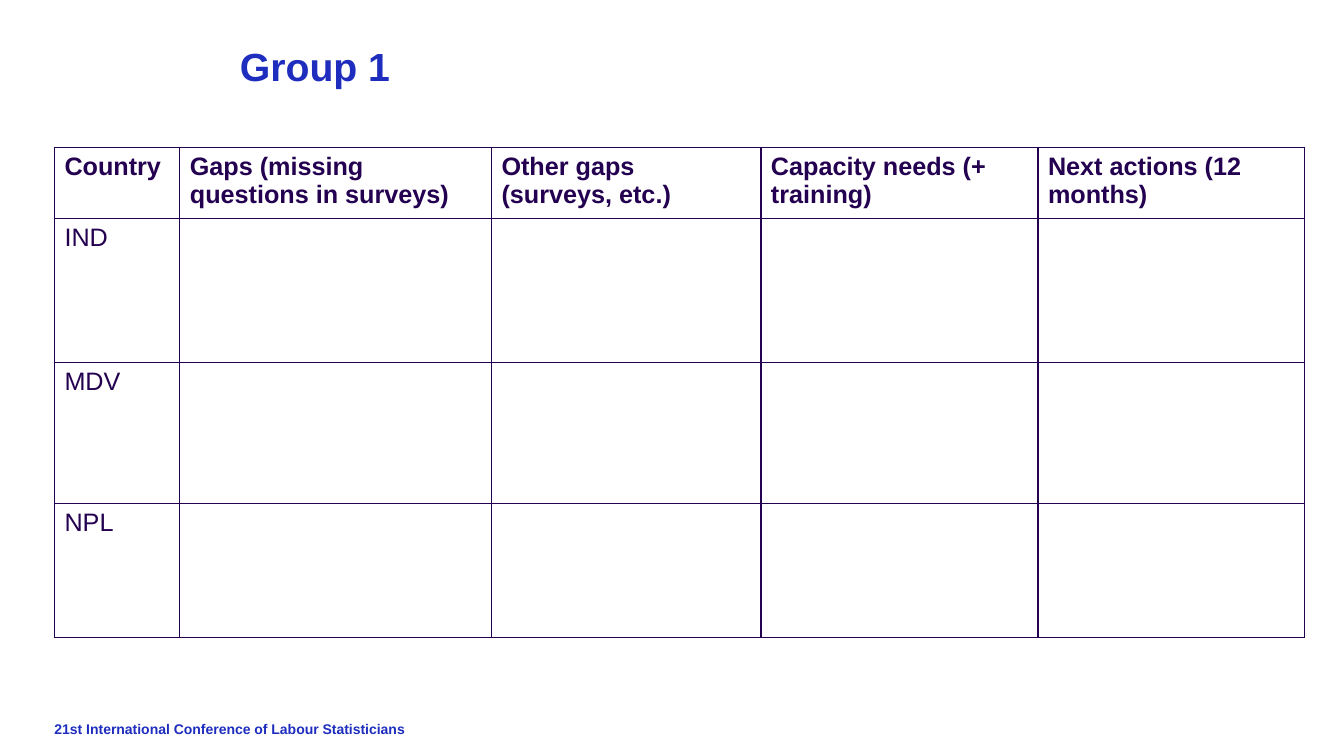
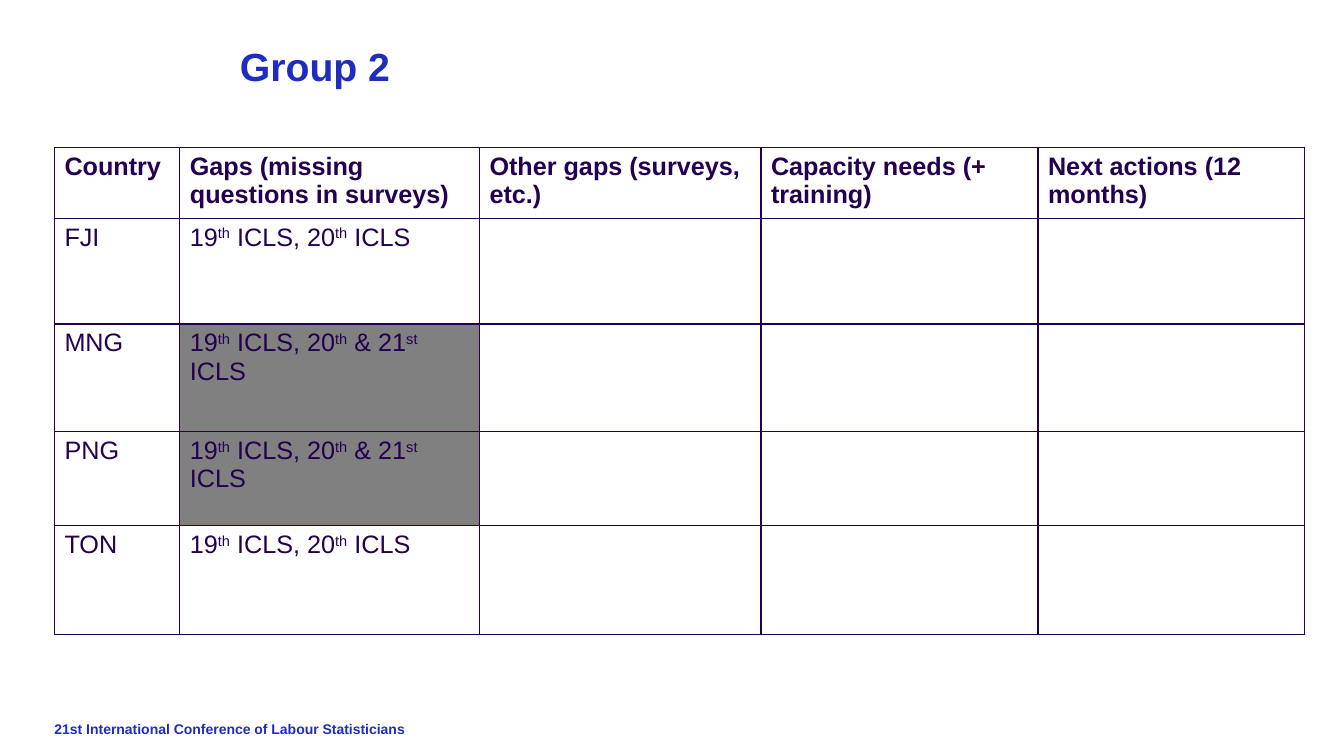
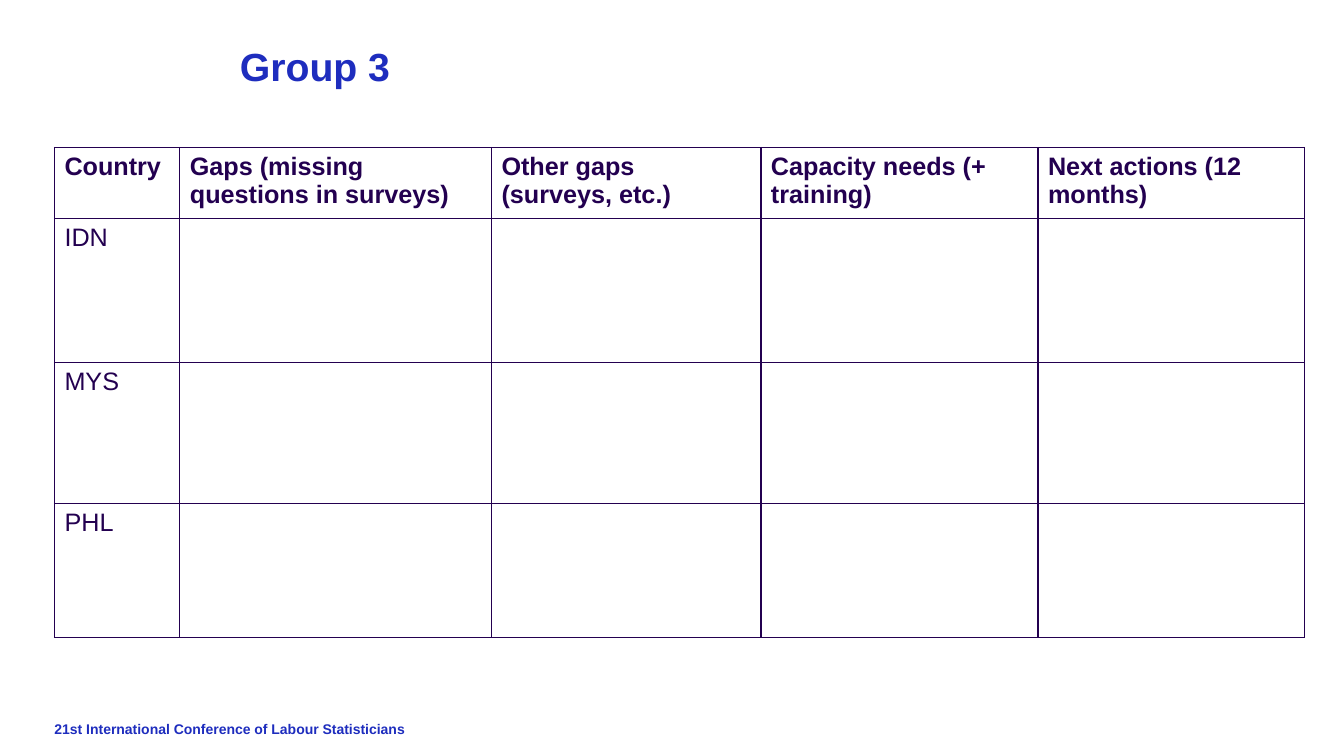
from lxml import etree
from pptx import Presentation
from pptx.dml.color import RGBColor
from pptx.enum.text import MSO_ANCHOR
from pptx.oxml.ns import qn
from pptx.util import Pt

TOP = MSO_ANCHOR.TOP
MIDDLE = MSO_ANCHOR.MIDDLE
TITLE_ONLY = 5

COLORS = {"blue": "1E2DBE", "purple": "230050", "white": "FFFFFF", "gray": "808080"}
FONT = "Arial"
LEFT = 38.9
HEADER_HEIGHT = 47.2
COUNTRY_WIDTH, CAPACITY_WIDTH, ACTIONS_WIDTH = 89.6, 197.9, 190.4
BOTH_GAPS_WIDTH = 415.1
HEADINGS = [
    "Country",
    "Gaps (missing questions in surveys)",
    "Other gaps (surveys, etc.)",
    "Capacity needs (+ training)",
    "Next actions (12 months)",
]
TWO_CONFERENCES = "19^th^ ICLS, 20^th^ ICLS"
THREE_CONFERENCES = "19^th^ ICLS, 20^th^ & 21^st^ ICLS"

GROUPS = [
    {
        "title": "Group 1",
        "gaps_width": 222.6,
        "heights": [103.2, 100.4, 95.8],
        "rows": [("IND", "", "white"), ("MDV", "", "white"), ("NPL", "", "white")],
    },
    {
        "title": "Group 2",
        "gaps_width": 214,
        "heights": [75.6, 77, 67.2, 77.8],
        "rows": [
            ("FJI", TWO_CONFERENCES, "white"),
            ("MNG", THREE_CONFERENCES, "gray"),
            ("PNG", THREE_CONFERENCES, "gray"),
            ("TON", TWO_CONFERENCES, "white"),
        ],
    },
    {
        "title": "Group 3",
        "gaps_width": 222.6,
        "heights": [103.2, 100.4, 95.8],
        "rows": [("IDN", "", "white"), ("MYS", "", "white"), ("PHL", "", "white")],
    },
]


def write_text(frame, text, size=18, color="purple", bold=False, anchor=TOP,
               margin=None, spacing=None):
    frame.word_wrap = True
    frame.vertical_anchor = anchor
    if margin is not None:
        frame.margin_left = frame.margin_right = Pt(margin)
        frame.margin_top = frame.margin_bottom = Pt(margin)
    paragraph = frame.paragraphs[0]
    paragraph.font.size = Pt(size)
    if spacing:
        paragraph.line_spacing = spacing
    for index, part in enumerate(text.split("^")):
        if not part:
            continue
        run = paragraph.add_run()
        run.text = part
        run.font.name = FONT
        run.font.size = Pt(size)
        run.font.bold = bold
        run.font.color.rgb = RGBColor.from_string(COLORS[color])
        if index % 2:
            run._r.get_or_add_rPr().set("baseline", "30000")


def format_cell(cell, fill):
    properties = cell._tc.get_or_add_tcPr()
    for side in ("a:lnL", "a:lnR", "a:lnT", "a:lnB"):
        line = etree.SubElement(properties, qn(side), w=str(Pt(1)))
        solid = etree.SubElement(line, qn("a:solidFill"))
        etree.SubElement(solid, qn("a:srgbClr"), val=COLORS["purple"])
    cell.fill.solid()
    cell.fill.fore_color.rgb = RGBColor.from_string(COLORS[fill])


presentation = Presentation()
presentation.slide_width = Pt(960)
presentation.slide_height = Pt(540)

for group in GROUPS:
    slide = presentation.slides.add_slide(presentation.slide_layouts[TITLE_ONLY])

    footer = slide.shapes.add_textbox(Pt(LEFT), Pt(513.4), Pt(441.4), Pt(14.4))
    write_text(footer.text_frame, "21st International Conference of Labour Statisticians",
               size=10, color="blue", bold=True, anchor=MIDDLE, margin=0)

    title = slide.shapes.title
    title.left, title.top, title.width, title.height = Pt(171.4), Pt(33.8), Pt(616.3), Pt(38.9)
    write_text(title.text_frame, group["title"], size=28, color="blue", bold=True,
               margin=0, spacing=0.9)
    title.text_frame.paragraphs[0].alignment = 1

    gaps_width = group["gaps_width"]
    widths = [COUNTRY_WIDTH, gaps_width, BOTH_GAPS_WIDTH - gaps_width,
              CAPACITY_WIDTH, ACTIONS_WIDTH]
    heights = [HEADER_HEIGHT] + group["heights"]
    table = slide.shapes.add_table(len(heights), len(widths), Pt(LEFT), Pt(105.4),
                                   Pt(sum(widths)), Pt(sum(heights))).table
    table.first_row = False
    table.horz_banding = False
    for column, width in zip(table.columns, widths):
        column.width = Pt(width)
    for row, height in zip(table.rows, heights):
        row.height = Pt(height)

    for column_index, heading in enumerate(HEADINGS):
        cell = table.cell(0, column_index)
        format_cell(cell, "white")
        write_text(cell.text_frame, heading, bold=True)

    for row_index, (country, gaps, gaps_fill) in enumerate(group["rows"], start=1):
        for column_index, text in enumerate([country, gaps, "", "", ""]):
            cell = table.cell(row_index, column_index)
            format_cell(cell, gaps_fill if column_index == 1 else "white")
            write_text(cell.text_frame, text)

presentation.save("out.pptx")
